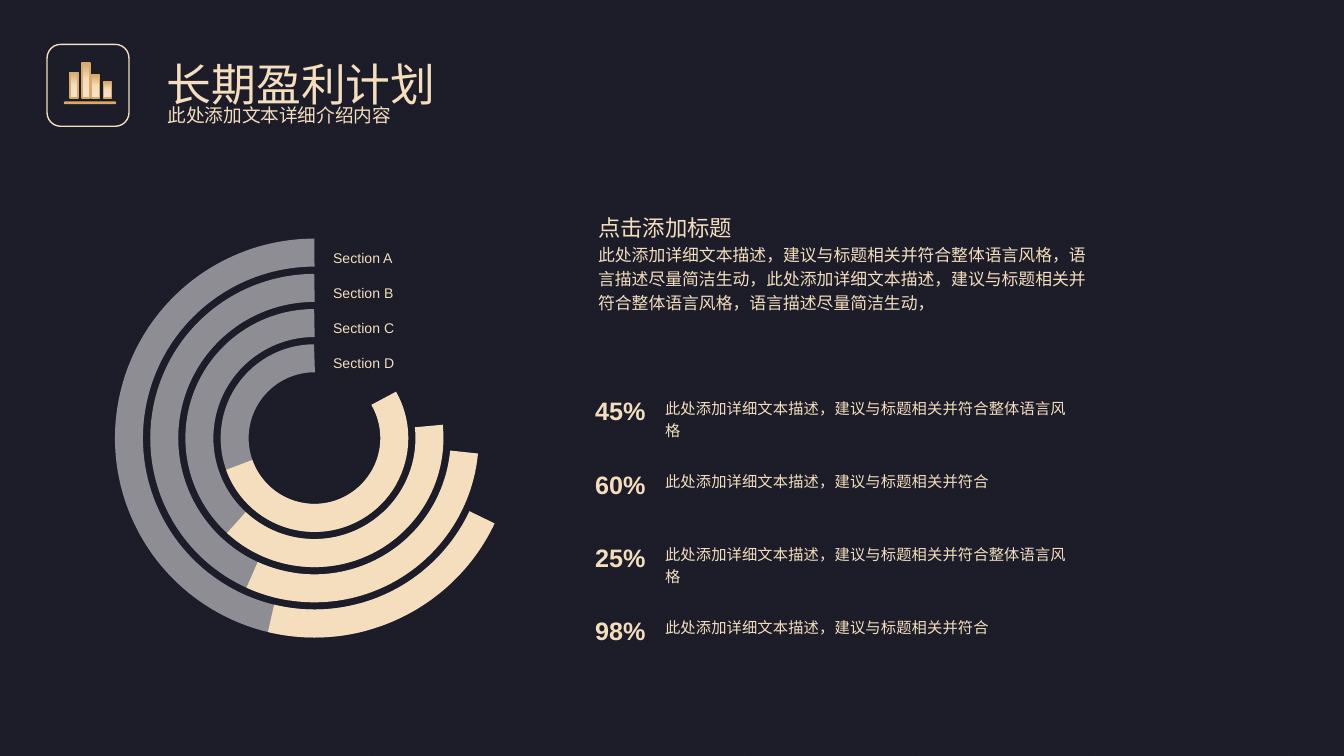
from lxml import etree
from pptx import Presentation
from pptx.dml.color import RGBColor
from pptx.enum.dml import MSO_PATTERN
from pptx.enum.shapes import MSO_SHAPE
from pptx.enum.text import MSO_ANCHOR, MSO_AUTO_SIZE, PP_ALIGN
from pptx.oxml import parse_xml
from pptx.oxml.ns import nsdecls, qn
from pptx.util import Inches, Pt

ARC, BAR, ROUNDED = MSO_SHAPE.ARC, MSO_SHAPE.RECTANGLE, MSO_SHAPE.ROUNDED_RECTANGLE
DIAGONAL = MSO_PATTERN.LIGHT_UPWARD_DIAGONAL
TOP, LEFT = MSO_ANCHOR.TOP, PP_ALIGN.LEFT
FIT_SHAPE, NO_FIT = MSO_AUTO_SIZE.SHAPE_TO_FIT_TEXT, MSO_AUTO_SIZE.NONE

NIGHT = RGBColor(0x1B, 0x1C, 0x27)
NIGHT_STRIPE = RGBColor(0x22, 0x23, 0x32)
CREAM = RGBColor(0xF4, 0xDE, 0xBE)
PALE_CREAM = RGBColor(0xF5, 0xE3, 0xC9)
GOLD = RGBColor(0xD9, 0xA9, 0x6A)
WHITE = RGBColor(0xFF, 0xFF, 0xFF)

FONT = "Arial"
RING_CENTER = (2.34, 3.26)
RING_SIZE, RING_STEP = 2.76, 0.524
ROW_TOP, ROW_STEP = 2.85, 0.545

# Label, end of the grey arc, start and end of the cream arc, in degrees
RINGS = [
    ("Section A", 105.34, 25.31, 103.52),
    ("Section B", 81, 5.32, 114.5),
    ("Section C", 132.05, 353.98, 132.74),
    ("Section D", 150.58, 330.09, 160.38),
]
SHORT_TEXT = "此处添加详细文本描述，建议与标题相关并符合"
LONG_TEXT = SHORT_TEXT + "整体语言风格"
ROWS = [("45%", LONG_TEXT), ("60%", SHORT_TEXT), ("25%", LONG_TEXT), ("98%", SHORT_TEXT)]
DESCRIPTION = (LONG_TEXT + "，语言描述尽量简洁生动，") * 2


def format_paragraph(paragraph, size, bold=False):
    paragraph.alignment = LEFT
    paragraph.line_spacing = 1.2
    paragraph.space_before = Pt(0)
    paragraph.font.name = FONT
    paragraph.font.size = Pt(size)
    paragraph.font.bold = bold
    paragraph.font.color.rgb = CREAM


def add_text(slide, box, text, size, bold=False):
    shape = slide.shapes.add_textbox(*map(Inches, box))
    frame = shape.text_frame
    frame.word_wrap = True
    frame.auto_size = FIT_SHAPE
    frame.text = text
    format_paragraph(frame.paragraphs[0], size, bold)


def fill_placeholder(shape, box, lines):
    """Move a placeholder and fill it with (text, size) lines without bullets."""
    shape.left, shape.top, shape.width, shape.height = map(Inches, box)
    frame = shape.text_frame
    frame.auto_size = NO_FIT
    frame.vertical_anchor = TOP
    frame.text = "\n".join(text for text, _ in lines)
    for paragraph, (_, size) in zip(frame.paragraphs, lines):
        format_paragraph(paragraph, size)
        properties = paragraph._p.get_or_add_pPr()
        properties.set("marL", "0")
        properties.set("indent", "0")
        # Element order: the bullet comes between spacing and font
        etree.SubElement(properties, qn("a:buNone"))
        properties.append(properties.find(qn("a:defRPr")))


def add_outline(group, kind, box, color, width):
    shape = group.shapes.add_shape(kind, *map(Inches, box))
    shape.shadow.inherit = False
    shape.fill.background()
    shape.line.color.rgb = color
    shape.line.width = Pt(width)
    return shape


def add_arc(group, index, color, start, end):
    size = RING_SIZE - index * RING_STEP
    left, top = (center - size / 2 for center in RING_CENTER)
    arc = add_outline(group, ARC, (left, top, size, size), color, 15)
    # Arc angles are stored as 60000ths of a degree, adjustments as 100000ths
    arc.adjustments[0] = start * 0.6
    arc.adjustments[1] = end * 0.6
    return arc


def add_gray_arc(group, index, end):
    arc = add_arc(group, index, WHITE, 270, end)
    properties = arc._element.spPr
    properties.find(qn("a:xfrm")).set("flipH", "1")
    color = properties.find(qn("a:ln")).find(".//" + qn("a:srgbClr"))
    etree.SubElement(color, qn("a:alpha")).set("val", "50000")


def add_gold_shape(group, kind, box):
    shape = add_outline(group, kind, box, GOLD, 0.75)
    stops = "".join(
        f'<a:gs pos="{position}"><a:srgbClr val="{color}"/></a:gs>'
        for position, color in ((0, GOLD), (48000, CREAM), (100000, PALE_CREAM))
    )
    gradient = parse_xml(
        f'<a:gradFill {nsdecls("a")}><a:gsLst>{stops}</a:gsLst>'
        '<a:lin ang="5400000" scaled="0"/></a:gradFill>'
    )
    properties = shape._element.spPr
    properties.replace(properties.find(qn("a:noFill")), gradient)
    return shape


def add_icon(slide):
    group = slide.shapes.add_group_shape()
    add_outline(group, ROUNDED, (0.35, 0.33, 0.61, 0.61), CREAM, 0.75)
    base = add_gold_shape(group, ROUNDED, (0.48, 0.76, 0.38, 0.01))
    base.adjustments[0] = 0.5
    for left, height in ((0.52, 0.19), (0.61, 0.26), (0.68, 0.17), (0.77, 0.12)):
        add_gold_shape(group, BAR, (left, 0.73 - height, 0.06, height))


def add_rings(slide):
    group = slide.shapes.add_group_shape()
    for index, (_, gray_end, _, _) in enumerate(RINGS):
        add_gray_arc(group, index, gray_end)
    for index, (label, _, start, end) in enumerate(RINGS):
        add_arc(group, index, CREAM, start, end)
        top = 1.78 + index * RING_STEP / 2
        add_text(slide, (2.38, top, 0.72, 0.24), label, 7.5)


def add_rows(slide):
    for index, (percent, text) in enumerate(ROWS):
        top = ROW_TOP + index * ROW_STEP
        height = 0.42 if text == LONG_TEXT else 0.25
        add_text(slide, (4.33, top, 0.62, 0.35), percent, 13.5, bold=True)
        add_text(slide, (4.85, top + 0.04, 3.24, height), text, 8.25)


def main():
    presentation = Presentation()
    presentation.slide_width = Inches(10)
    presentation.slide_height = Inches(5.625)
    slide = presentation.slides.add_slide(presentation.slide_layouts[1])

    # Striped dark background
    background = slide.background.fill
    background.patterned()
    background.pattern = DIAGONAL
    background.fore_color.rgb = NIGHT_STRIPE
    background.back_color.rgb = NIGHT

    # Header
    add_icon(slide)
    fill_placeholder(slide.shapes.title, (1.14, 0.29, 2.36, 0.54), [("长期盈利计划", 24)])
    add_text(slide, (1.15, 0.69, 1.89, 0.28), "此处添加文本详细介绍内容", 10)

    # Ring diagram on the left, texts on the right
    add_rings(slide)
    fill_placeholder(
        slide.placeholders[1],
        (4.35, 1.5, 3.94, 0.87),
        [("点击添加标题", 12), (DESCRIPTION, 9)],
    )
    add_rows(slide)

    presentation.save("out.pptx")


if __name__ == "__main__":
    main()
